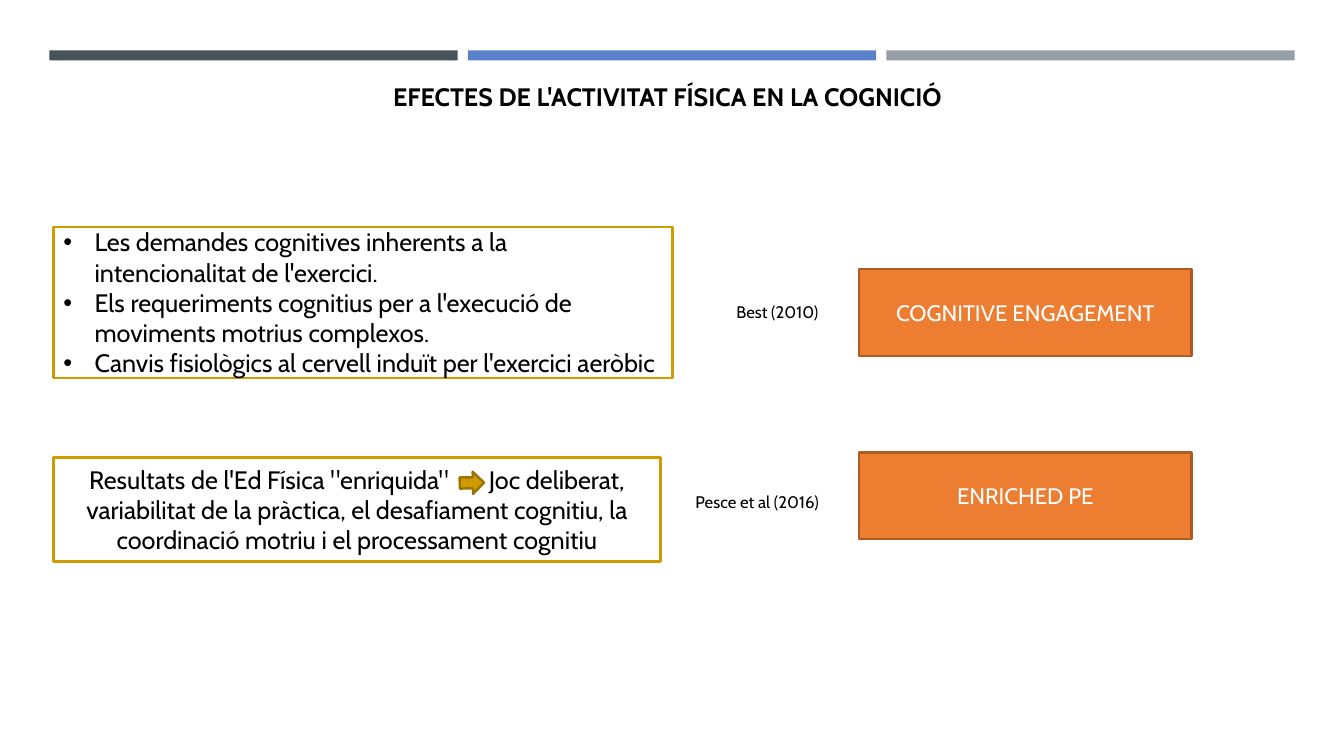
from lxml.etree import SubElement
from pptx import Presentation
from pptx.dml.color import RGBColor
from pptx.enum.shapes import MSO_SHAPE as Preset
from pptx.enum.text import MSO_ANCHOR as Anchor, MSO_AUTO_SIZE as AutoSize, PP_ALIGN as Align
from pptx.oxml.ns import qn
from pptx.util import Inches, Pt

FONT = "Cabin"
BLACK = RGBColor(0x00, 0x00, 0x00)
WHITE = RGBColor(0xFF, 0xFF, 0xFF)
SLATE = RGBColor(0x46, 0x53, 0x59)
BLUE = RGBColor(0x5A, 0x82, 0xCB)
GRAY = RGBColor(0x96, 0x9F, 0xA7)
GOLD = RGBColor(0xCF, 0x9B, 0x00)
DARK_GOLD = RGBColor(0x9B, 0x74, 0x00)
ORANGE = RGBColor(0xED, 0x7D, 0x31)
DARK_ORANGE = RGBColor(0xAF, 0x5C, 0x24)

DEMANDS = [
    "Les demandes cognitives inherents a la intencionalitat de l'exercici.",
    "Els requeriments cognitius per a l'execució de moviments motrius complexos.",
    "Canvis fisiològics al cervell induït per l'exercici aeròbic",
]
RESULTS = "Resultats de l'Ed Física \"enriquida\""
METHODS = ("Joc deliberat, variabilitat de la pràctica, el desafiament cognitiu, "
           "la coordinació motriu i el processament cognitiu")


def format_text(text_frame, size, color, align, bold=False):
    """Apply one font and alignment to all the text of a frame."""
    text_frame.word_wrap = True
    for paragraph in text_frame.paragraphs:
        paragraph.alignment = align
        for run in paragraph.runs:
            run.font.name = FONT
            run.font.size = Pt(size)
            run.font.bold = bold
            run.font.color.rgb = color


def add_preset(slide, preset, left, top, width, height, fill, line=None):
    """Add a flat preset shape, outlined when a line colour is given."""
    shape = slide.shapes.add_shape(
        preset, Inches(left), Inches(top), Inches(width), Inches(height))
    shape.shadow.inherit = False
    shape.fill.solid()
    shape.fill.fore_color.rgb = fill
    if line is None:
        shape.line.fill.background()
    else:
        shape.line.color.rgb = line
        shape.line.width = Pt(1.75)
    return shape


def add_box(slide, left, top, width, height, text, size, colors, align=Align.CENTER):
    """Add a rectangle with vertically centred text and return its frame."""
    fill, line, font_color = colors
    shape = add_preset(slide, Preset.RECTANGLE, left, top, width, height, fill, line)
    text_frame = shape.text_frame
    text_frame.text = text
    text_frame.vertical_anchor = Anchor.MIDDLE
    format_text(text_frame, size, font_color, align)
    return text_frame


def add_label(slide, left, top, width, height, text, size, align, bold=False):
    """Add a text box that grows with its text."""
    box = slide.shapes.add_textbox(
        Inches(left), Inches(top), Inches(width), Inches(height))
    box.text_frame.text = text
    box.text_frame.auto_size = AutoSize.SHAPE_TO_FIT_TEXT
    format_text(box.text_frame, size, BLACK, align, bold)


def add_bullets(text_frame):
    """Give each paragraph a round bullet and a hanging indent."""
    for paragraph in text_frame.paragraphs:
        properties = paragraph._p.get_or_add_pPr()
        properties.set("marL", str(Inches(0.31)))
        properties.set("indent", str(-Inches(0.31)))
        SubElement(properties, qn("a:buFont"), typeface="Arial")
        SubElement(properties, qn("a:buChar"), char="•")


def add_results_box(slide):
    """Add the results box with a widened space that holds an arrow."""
    colors = (WHITE, GOLD, BLACK)
    text_frame = add_box(slide, 0.53, 4.54, 6.02, 1.03, RESULTS, 18, colors)
    paragraph = text_frame.paragraphs[0]
    gap = paragraph.add_run()
    gap.text = " "
    gap._r.get_or_add_rPr().set("spc", str(Pt(24.5).centipoints))
    paragraph.add_run().text = METHODS
    format_text(text_frame, 18, BLACK, Align.CENTER)
    arrow = add_preset(slide, Preset.UP_ARROW, 4.57, 4.67, 0.22, 0.24, GOLD, DARK_GOLD)
    arrow.rotation = 89


def main():
    """Build the slide and save it."""
    presentation = Presentation()
    presentation.slide_width = Inches(13.33)
    presentation.slide_height = Inches(7.5)
    slide = presentation.slides.add_slide(presentation.slide_layouts[6])

    for index, color in enumerate((SLATE, BLUE, GRAY)):
        add_preset(slide, Preset.RECTANGLE, 0.49 + 4.15 * index, 0.5, 4.05, 0.1, color)
    add_label(slide, 3.8, 0.76, 6.88, 0.4,
              "EFECTES DE L'ACTIVITAT FÍSICA EN LA COGNICIÓ", 18, Align.LEFT, True)

    demands = add_box(slide, 0.53, 2.25, 6.14, 1.5, "\n".join(DEMANDS), 18,
                      (WHITE, GOLD, BLACK), Align.LEFT)
    add_bullets(demands)
    add_results_box(slide)

    add_label(slide, 6.21, 2.94, 3, 0.3, "Best (2010)", 12, Align.CENTER)
    add_label(slide, 6.01, 4.83, 3, 0.3, "Pesce et al (2016)", 12, Align.CENTER)
    for top, concept in ((2.67, "COGNITIVE ENGAGEMENT"), (4.49, "ENRICHED PE")):
        add_box(slide, 8.52, top, 3.3, 0.86, concept, 16, (ORANGE, DARK_ORANGE, WHITE))

    presentation.save("out.pptx")


if __name__ == "__main__":
    main()
